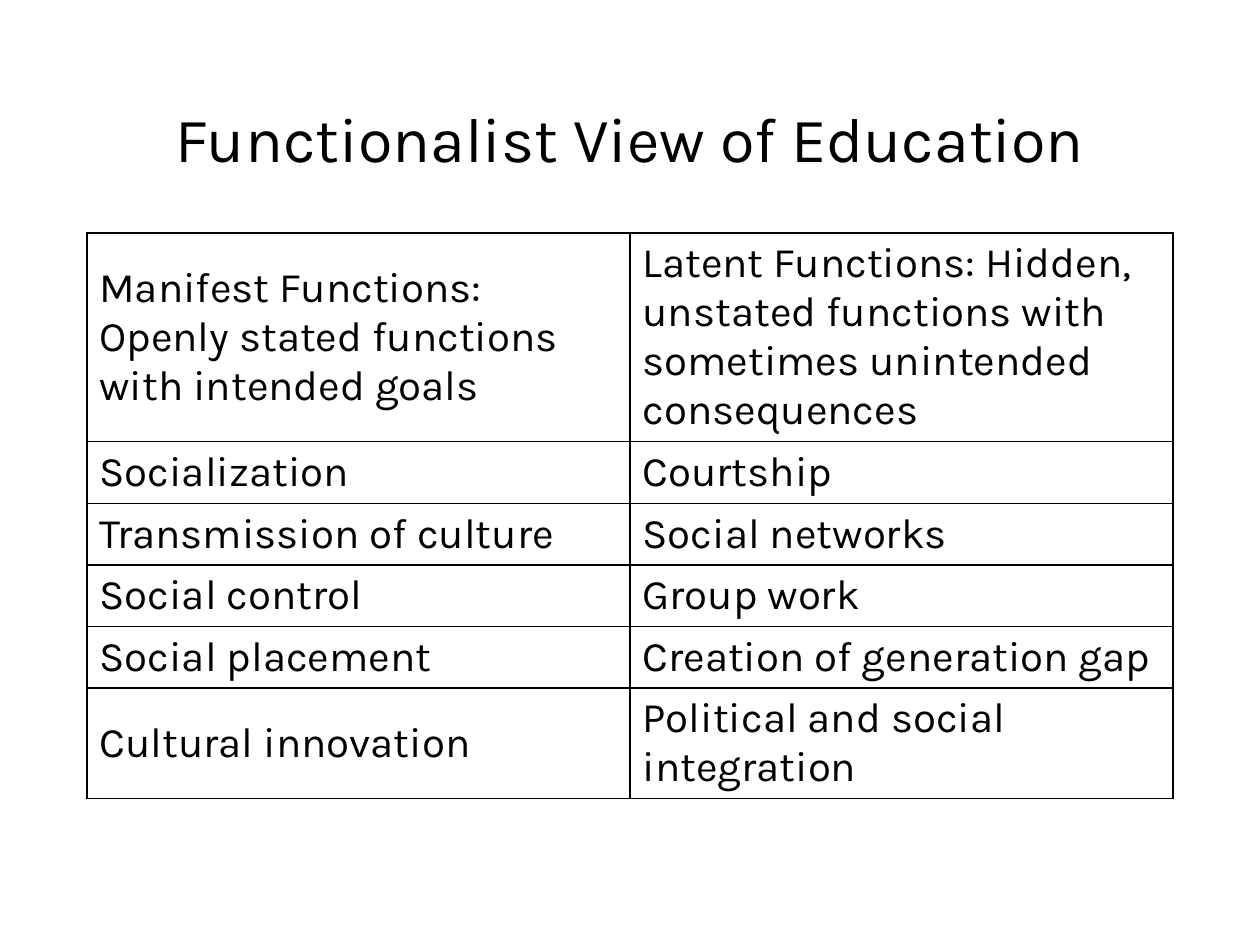
from typing import NamedTuple

from lxml import etree
from pptx import Presentation
from pptx import util as u
from pptx.dml.color import RGBColor
from pptx.enum import text
from pptx.oxml import ns

BLACK = RGBColor(0, 0, 0)
FONT = "Karla"
LEFT, WIDTH = u.Cm(1.75), u.Cm(21.9)
TITLE_TOP, TITLE_HEIGHT = u.Cm(1.02), u.Cm(3.68)
TABLE_TOP = TITLE_TOP + TITLE_HEIGHT


class FunctionPair(NamedTuple):
    manifest: str
    latent: str
    height: u.Length = u.Cm(1.24)


PAIRS = [
    FunctionPair("Manifest Functions: Openly stated functions with intended goals",
                 "Latent Functions: Hidden, unstated functions with sometimes "
                 "unintended consequences", u.Cm(4.19)),
    FunctionPair("Socialization", "Courtship"),
    FunctionPair("Transmission of culture", "Social networks"),
    FunctionPair("Social control", "Group work"),
    FunctionPair("Social placement", "Creation of generation gap"),
    FunctionPair("Cultural innovation", "Political and social integration", u.Cm(2.23)),
]


def format_runs(paragraph, size: int) -> None:
    for run in paragraph.runs:
        run.font.name = FONT
        run.font.size = u.Pt(size)
        run.font.bold = False
        run.font.color.rgb = BLACK


def add_borders(cell) -> None:
    """Draw a one-point line on each side; borders precede the cell fill."""
    properties = cell._tc.get_or_add_tcPr()
    for index, side in enumerate(("lnL", "lnR", "lnT", "lnB")):
        line = etree.Element(ns.qn(f"a:{side}"), w=str(u.Pt(1)))
        fill = etree.SubElement(line, ns.qn("a:solidFill"))
        etree.SubElement(fill, ns.qn("a:srgbClr"), val=str(BLACK))
        properties.insert(index, line)


def fill_cell(cell, words: str) -> None:
    cell.text_frame.text = words
    cell.vertical_anchor = text.MSO_ANCHOR.MIDDLE
    cell.fill.background()
    format_runs(cell.text_frame.paragraphs[0], 24)
    add_borders(cell)


def add_title(slide, words: str) -> None:
    title = slide.shapes.title
    title.left, title.top = LEFT, TITLE_TOP
    title.width, title.height = WIDTH, TITLE_HEIGHT
    title.text_frame.text = words
    title.text_frame.vertical_anchor = text.MSO_ANCHOR.MIDDLE
    paragraph = title.text_frame.paragraphs[0]
    paragraph.alignment = text.PP_ALIGN.CENTER
    paragraph.line_spacing = 0.9
    format_runs(paragraph, 36)


def add_function_table(slide, pairs: list[FunctionPair]) -> None:
    height = sum(pair.height for pair in pairs)
    table = slide.shapes.add_table(len(pairs), 2, LEFT, TABLE_TOP, WIDTH, height).table
    table.first_row = table.horz_banding = False
    for row, pair in zip(table.rows, pairs):
        row.height = pair.height
        for cell, words in zip(row.cells, (pair.manifest, pair.latent)):
            fill_cell(cell, words)


def main() -> None:
    presentation = Presentation()
    presentation.slide_width, presentation.slide_height = u.Cm(25.4), u.Cm(19.05)
    # Title-only layout
    slide = presentation.slides.add_slide(presentation.slide_layouts[5])
    add_title(slide, "Functionalist View of Education")
    add_function_table(slide, PAIRS)
    presentation.save("out.pptx")


if __name__ == "__main__":
    main()
